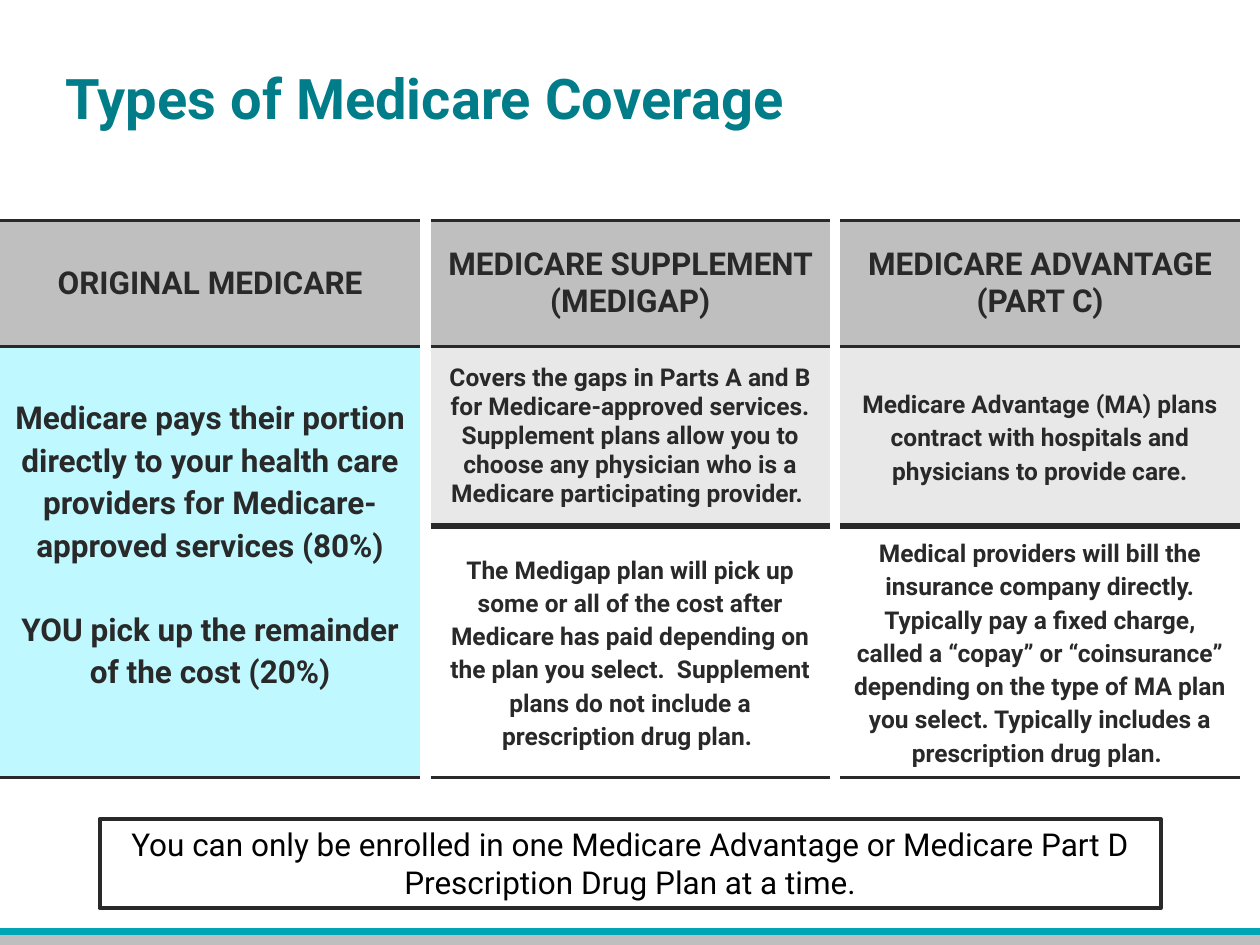
from dataclasses import dataclass

from lxml import etree
from pptx import Presentation
from pptx.dml.color import RGBColor
from pptx.enum import shapes, text
from pptx.oxml.ns import qn
from pptx.util import Cm, Pt

FONT = "Roboto"
COLORS = {
    "title": "007D88", "teal": "00A6B6", "footer": "BEBEBE", "ink": "292929",
    "black": "000000", "header": "BFBFBF", "cyan": "BFF9FF",
    "light": "E8E8E8", "white": "FFFFFF",
}
TABLE_TOP = 4.45
RULE, THICK_RULE = 2, 4


@dataclass
class Row:
    paragraphs: list[str]
    height: float
    fill: str
    size: int = 14
    spacing: float = 1.15
    top_rule: int = 0
    bottom_rule: int = 0
    bottom_margin: float = 0.13


@dataclass
class Plan:
    left: float
    width: float
    rows: list[Row]


def color(name: str) -> RGBColor:
    return RGBColor.from_string(COLORS[name])


def style(p, size: int, ink: str, bold: bool = False, align=None) -> None:
    f = p.font
    f.name, f.size, f.bold = FONT, Pt(size), bold
    f.color.rgb = color(ink)
    p.alignment = align


def header(label: str) -> Row:
    return Row([label], 2.54, "header", 18, 1.0, RULE, RULE)


def set_borders(cell, top: int, bottom: int) -> None:
    """Rule the top and bottom of a cell; its sides stay open."""
    tc_pr = cell._tc.get_or_add_tcPr()
    sides = {"L": 0, "R": 0, "T": top, "B": bottom}
    for i, (side, width) in enumerate(sides.items()):
        ln = etree.Element(qn(f"a:ln{side}"))
        tc_pr.insert(i, ln)
        if width:
            ln.set("w", str(Pt(width)))
            fill = etree.SubElement(ln, qn("a:solidFill"))
            etree.SubElement(fill, qn("a:srgbClr"), val=COLORS["ink"])
        else:
            etree.SubElement(ln, qn("a:noFill"))


def draw_plan(s, plan: Plan) -> None:
    height = sum(row.height for row in plan.rows)
    tbl = s.shapes.add_table(len(plan.rows), 1, Cm(plan.left), Cm(TABLE_TOP),
                             Cm(plan.width), Cm(height)).table
    tbl.first_row = tbl.horz_banding = False
    for i, row in enumerate(plan.rows):
        tbl.rows[i].height = Cm(row.height)
        cell = tbl.cell(i, 0)
        cell.fill.solid()
        cell.fill.fore_color.rgb = color(row.fill)
        cell.vertical_anchor = text.MSO_ANCHOR.MIDDLE
        cell.margin_bottom = Cm(row.bottom_margin)
        set_borders(cell, row.top_rule, row.bottom_rule)
        tf = cell.text_frame
        for n, words in enumerate(row.paragraphs):
            p = tf.add_paragraph() if n else tf.paragraphs[0]
            p.text = words
            p.line_spacing = row.spacing
            if n:
                p.space_before = Pt(24)
            style(p, row.size, "ink", True, text.PP_ALIGN.CENTER)


def draw_bar(s, top: float, height: float, fill: str) -> None:
    sp = s.shapes.add_shape(shapes.MSO_SHAPE.RECTANGLE, 0, Cm(top),
                            Cm(25.4), Cm(height))
    sp.shadow.inherit = False
    sp.fill.solid()
    sp.fill.fore_color.rgb = color(fill)
    sp.line.fill.background()


def draw_title(s, words: str) -> None:
    tf = s.shapes.add_textbox(Cm(1.07), Cm(0.76), Cm(23.06), Cm(2.41)).text_frame
    tf.word_wrap = True
    tf.vertical_anchor = text.MSO_ANCHOR.MIDDLE
    p = tf.paragraphs[0]
    p.text = words
    style(p, 32, "title", True)


def draw_note(s, words: str) -> None:
    sp = s.shapes.add_shape(shapes.MSO_SHAPE.RECTANGLE, Cm(2.01), Cm(16.51),
                            Cm(21.39), Cm(1.8))
    sp.shadow.inherit = False
    sp.fill.background()
    sp.line.color.rgb = color("ink")
    sp.line.width = Pt(2.25)
    tf = sp.text_frame
    tf.word_wrap = True
    tf.vertical_anchor = text.MSO_ANCHOR.TOP
    p = tf.paragraphs[0]
    p.text = words
    style(p, 18, "black", align=text.PP_ALIGN.CENTER)


PLANS = [
    Plan(0, 8.47, [
        header("ORIGINAL MEDICARE"),
        Row(["Medicare pays their portion directly to your health care providers "
             "for Medicare-approved services (80%)",
             "YOU pick up the remainder of the cost (20%)"],
            8.69, "cyan", 18, top_rule=RULE, bottom_rule=RULE, bottom_margin=0.89),
    ]),
    Plan(8.68, 8.05, [
        header("MEDICARE SUPPLEMENT (MEDIGAP)"),
        Row(["Covers the gaps in Parts A and B for Medicare-approved services. "
             "Supplement plans allow you to choose any physician who is a "
             "Medicare participating provider. "],
            3.61, "light", spacing=1.0, top_rule=RULE, bottom_rule=THICK_RULE),
        Row(["The Medigap plan will pick up some or all of the cost after "
             "Medicare has paid depending on the plan you select.  Supplement "
             "plans do not include a prescription drug plan. "],
            5.08, "white", top_rule=THICK_RULE, bottom_rule=RULE),
    ]),
    Plan(16.94, 8.05, [
        header("MEDICARE ADVANTAGE (PART C)"),
        Row(["Medicare Advantage (MA) plans contract with hospitals and "
             "physicians to provide care."],
            3.61, "light", top_rule=RULE, bottom_rule=THICK_RULE),
        Row(["Medical providers will bill the insurance company directly. "
             "Typically pay a fixed charge, called a “copay” or “coinsurance” "
             "depending on the type of MA plan you select. Typically includes "
             "a prescription drug plan. "],
            5.08, "white", top_rule=THICK_RULE, bottom_rule=RULE),
    ]),
]


def main() -> None:
    prs = Presentation()
    prs.slide_width, prs.slide_height = Cm(25.4), Cm(19.05)
    s = prs.slides.add_slide(prs.slide_layouts[6])

    # Footer stripes
    draw_bar(s, 18.85, 0.2, "footer")
    draw_bar(s, 18.71, 0.14, "teal")

    # Title, plan columns and closing note
    draw_title(s, "Types of Medicare Coverage")
    for plan in PLANS:
        draw_plan(s, plan)
    draw_note(s, "You can only be enrolled in one Medicare Advantage or "
                 "Medicare Part D Prescription Drug Plan at a time.")

    prs.save("out.pptx")


if __name__ == "__main__":
    main()
